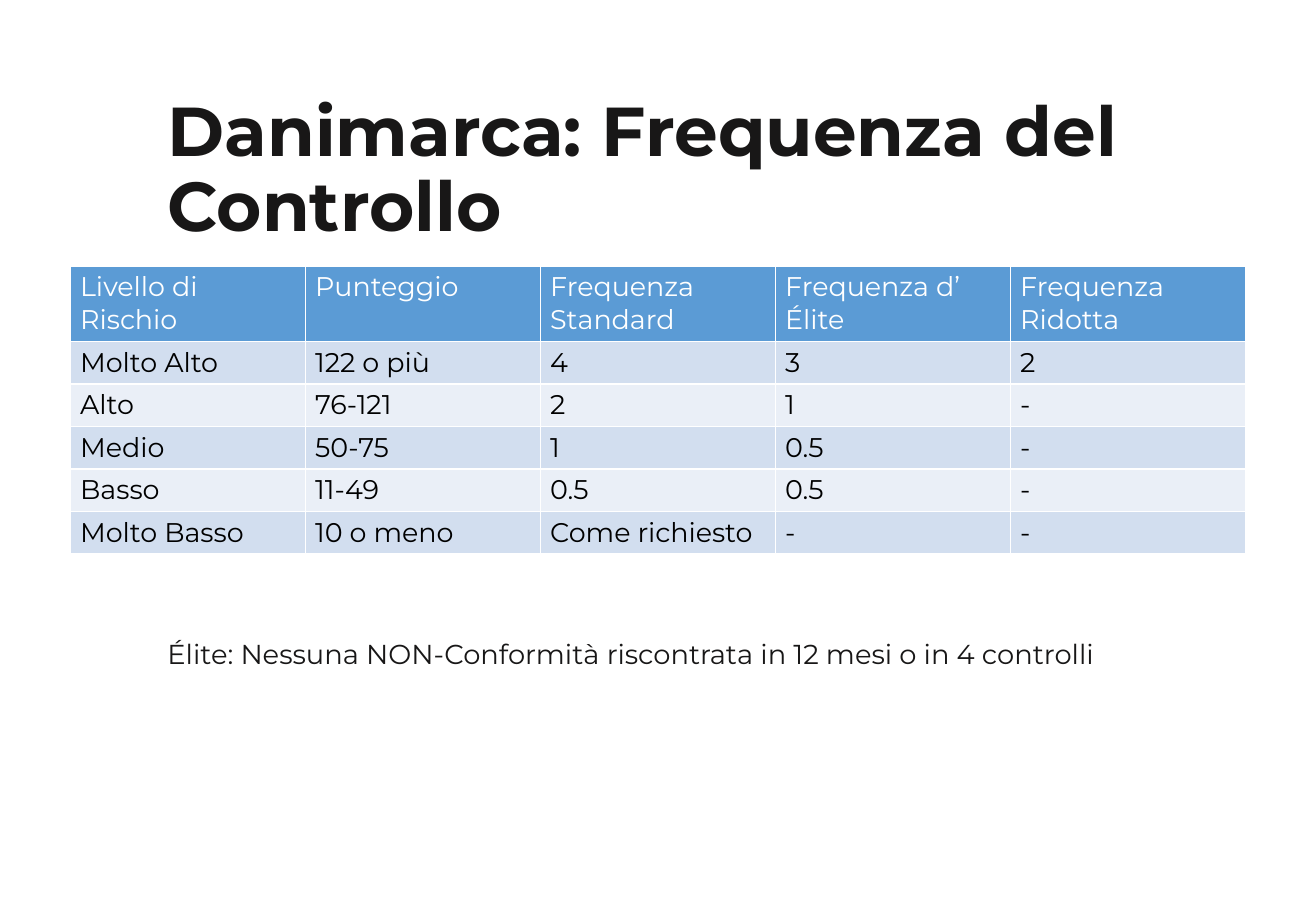
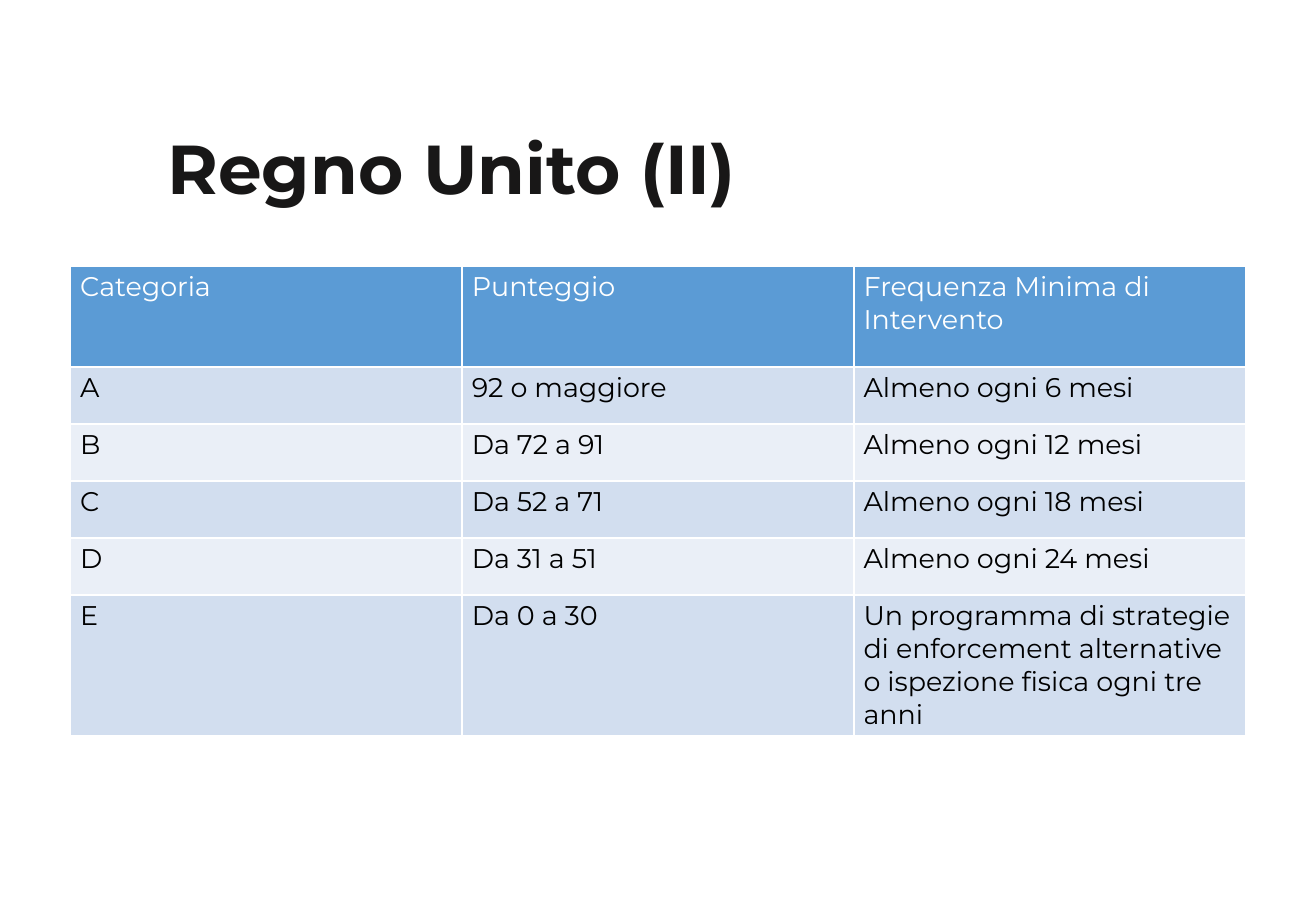
from pptx import Presentation
from pptx import util as u
from pptx.dml import color
from pptx.enum import text
from pptx.oxml import ns
from lxml import etree

FONT = "Montserrat"
INK, WHITE, BLACK = "181717", "FFFFFF", "000000"
HEADER_FILL = "5B9BD5"
BAND_FILLS = ("EAEFF7", "D2DEEF")
TABLE_LEFT, TABLE_TOP, TABLE_WIDTH = 0.58, 2.19, 9.67
TEXT_LEFT = 1.28

FREQUENCIES = [
    ("Livello di Rischio", "Punteggio", "Frequenza Standard", "Frequenza d’ Élite", "Frequenza Ridotta"),
    ("Molto Alto", "122 o più", "4", "3", "2"),
    ("Alto", "76-121", "2", "1", "-"),
    ("Medio", "50-75", "1", "0.5", "-"),
    ("Basso", "11-49", "0.5", "0.5", "-"),
    ("Molto Basso", "10 o meno", "Come richiesto", "-", "-"),
]
CATEGORIES = [
    ("Categoria", "Punteggio", "Frequenza Minima di Intervento"),
    ("A", "92 o maggiore", "Almeno ogni 6 mesi"),
    ("B", "Da 72 a 91", "Almeno ogni 12 mesi"),
    ("C", "Da 52 a 71", "Almeno ogni 18 mesi"),
    ("D", "Da 31 a 51", "Almeno ogni 24 mesi"),
    ("E", "Da 0 a 30",
     "Un programma di strategie di enforcement alternative o ispezione fisica ogni tre anni"),
]


def rgb(value):
    return color.RGBColor.from_string(value)


def add_span(para, words, size, ink, bold=False):
    span = para.add_run()
    span.text = words
    span.font.name = FONT
    span.font.size = u.Pt(size)
    span.font.bold = bold
    span.font.color.rgb = rgb(ink)


def add_text(page, words, top, width, height, size, bold=False, wrap=True):
    box = page.shapes.add_textbox(*map(u.Inches, (TEXT_LEFT, top, width, height)))
    box.text_frame.word_wrap = wrap
    add_span(box.text_frame.paragraphs[0], words, size, INK, bold)
    return box.text_frame


def add_page(deck, title):
    page = deck.slides.add_slide(deck.slide_layouts[6])
    frame = add_text(page, title, 0.96, 8.79, 0.91, 41, bold=True)
    frame.vertical_anchor = text.MSO_ANCHOR.MIDDLE
    frame.paragraphs[0].line_spacing = 0.9
    return page


def add_borders(cell):
    properties = cell._tc.get_or_add_tcPr()
    for side in ("lnL", "lnR", "lnT", "lnB"):
        line = etree.SubElement(properties, ns.qn(f"a:{side}"), w=str(u.Pt(1)))
        fill = etree.SubElement(line, ns.qn("a:solidFill"))
        etree.SubElement(fill, ns.qn("a:srgbClr"), val=WHITE)


def style_cell(cell, words, fill, ink):
    cell.margin_left = cell.margin_right = u.Inches(0.08)
    cell.margin_top = cell.margin_bottom = u.Inches(0.04)
    add_borders(cell)
    cell.fill.solid()
    cell.fill.fore_color.rgb = rgb(fill)
    add_span(cell.text_frame.paragraphs[0], words, 16, ink)


def add_banded_table(page, rows, heights):
    columns = len(rows[0])
    frame = page.shapes.add_table(
        len(rows), columns,
        *map(u.Inches, (TABLE_LEFT, TABLE_TOP, TABLE_WIDTH, sum(heights))))
    table = frame.table
    for column in table.columns:
        column.width = u.Inches(TABLE_WIDTH / columns)
    for index, (row, height) in enumerate(zip(rows, heights)):
        table.rows[index].height = u.Inches(height)
        fill, ink = (BAND_FILLS[index % 2], BLACK) if index else (HEADER_FILL, WHITE)
        for cell, words in zip(table.rows[index].cells, row):
            style_cell(cell, words, fill, ink)


def main():
    deck = Presentation()
    deck.slide_width, deck.slide_height = u.Inches(10.83), u.Inches(7.5)

    page = add_page(deck, "Danimarca: Frequenza del Controllo")
    add_banded_table(page, FREQUENCIES, [0.62] + [0.35] * 5)
    add_text(page, "Élite: Nessuna NON-Conformità riscontrata in 12 mesi o in 4 controlli",
             5.2, 7.97, 0.65, 16.2, wrap=False)

    page = add_page(deck, "Regno Unito (II)")
    add_banded_table(page, CATEGORIES, [0.83] + [0.47] * 4 + [1.16])

    deck.save("out.pptx")


if __name__ == "__main__":
    main()
